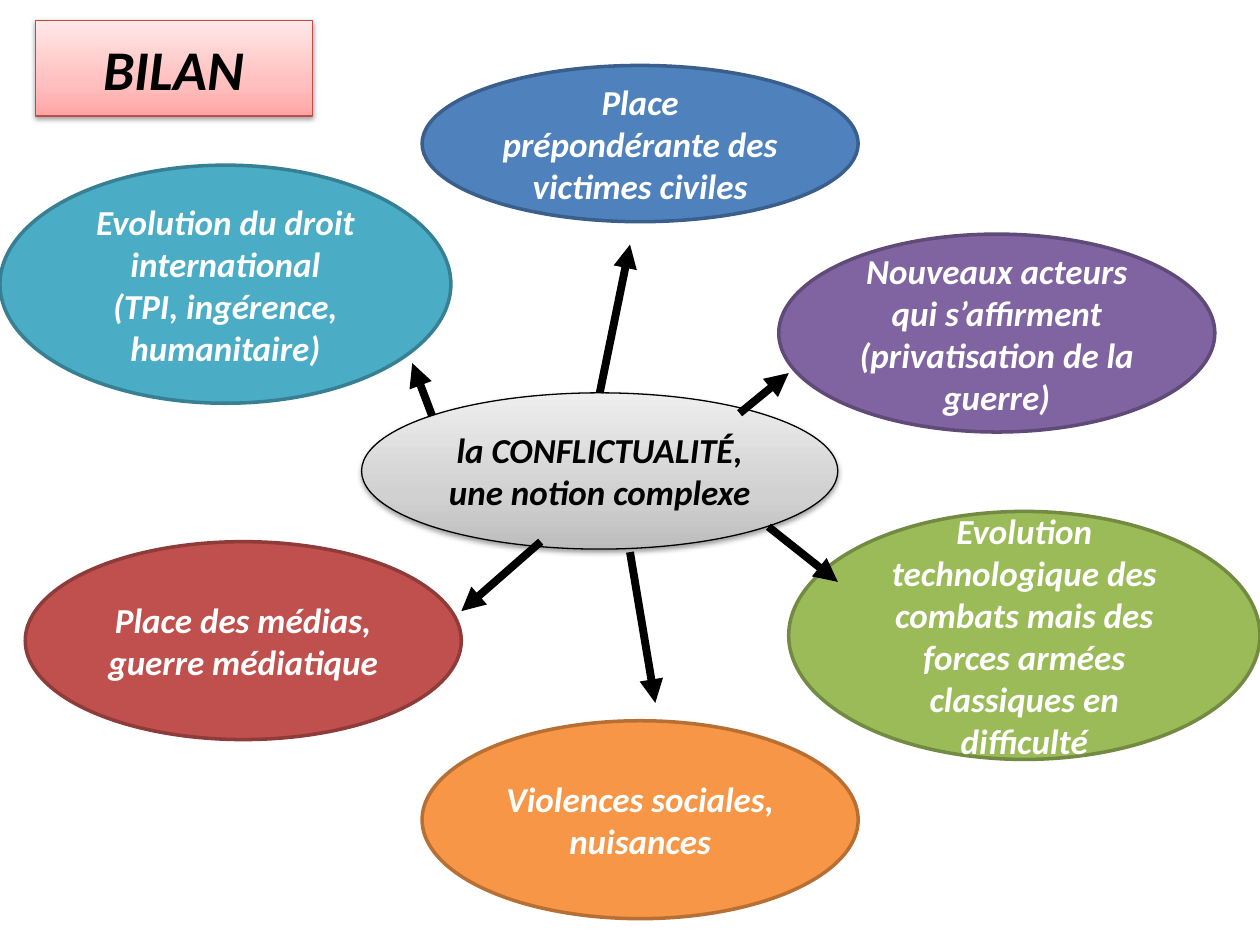
import pptx
import pptx.dml.color
import pptx.enum.dml
import pptx.enum.shapes
import pptx.enum.text
import pptx.oxml
import pptx.oxml.ns
import pptx.util

Cm, Pt = pptx.util.Cm, pptx.util.Pt
NS = pptx.oxml.ns.nsdecls("a")
qn = pptx.oxml.ns.qn

COLORS = {
    "black": "000000", "white": "FFFFFF", "title_line": "BF4C48",
    "teal": "4BACC6", "teal_line": "377F92",
    "blue": "4F81BD", "blue_line": "3A5F8C",
    "purple": "8064A2", "purple_line": "5F4A78",
    "green": "9BBB59", "green_line": "738A42",
    "red": "C0504D", "red_line": "8E3B39",
    "orange": "F79646", "orange_line": "B76F34",
}
GRADIENTS = {
    "grey": {0: "BDBDBD", 35: "D1D1D1", 100: "EEEEEE"},
    "pink": {0: "FFA6A5", 35: "FFC0BF", 100: "FFE7E7"},
}
CENTRE = ((7.29, 7.92, 9.6, 3.15), "la CONFLICTUALITÉ, une notion complexe")
THEMES = [
    ("teal", (0, 3.33, 9.09, 4.8),
     "Evolution du droit international\n(TPI, ingérence, humanitaire)"),
    ("blue", (8.51, 1.32, 8.79, 3.15), "Place prépondérante des victimes civiles"),
    ("purple", (15.7, 4.72, 8.79, 3.99),
     "Nouveaux acteurs qui s’affirment (privatisation de la guerre)"),
    ("green", (15.9, 10.31, 9.5, 5),
     "Evolution technologique des combats mais des forces armées classiques en difficulté"),
    ("red", (0.51, 10.92, 8.79, 3.99), "Place des médias, guerre médiatique"),
    ("orange", (8.51, 14.53, 8.79, 3.99), "Violences sociales, nuisances"),
]
ARROWS = [
    (8.71, 8.38, 8.31, 7.32), (15.49, 10.62, 16.89, 11.73),
    (12.09, 7.92, 12.7, 4.93), (14.91, 8.33, 15.9, 7.52),
    (12.7, 11.13, 13.21, 14.17), (10.9, 10.92, 9.3, 12.32),
]


def rgb(name):
    """Return the palette colour of that name."""
    return pptx.dml.color.RGBColor.from_string(COLORS[name])


def set_line(sp, color, width):
    """Give a shape or connector a solid line."""
    sp.line.color.rgb = rgb(color)
    sp.line.width = Pt(width)


def set_text(sp, text, size, color):
    """Write centred bold italic paragraphs in a shape."""
    tf = sp.text_frame
    tf.text = text
    tf.word_wrap = True
    tf.vertical_anchor = pptx.enum.text.MSO_ANCHOR.MIDDLE
    for p in tf.paragraphs:
        p.alignment = pptx.enum.text.PP_ALIGN.CENTER
        p.font.name = "Calibri"
        p.font.size = Pt(size)
        p.font.bold = p.font.italic = True
        p.font.color.rgb = rgb(color)


def set_relief(sp, gradient, line):
    """Give a shape an upward gradient, a thin line and a soft shadow."""
    sp.fill.gradient()
    sp.fill.gradient_angle = 90
    spPr = sp._element.spPr
    stops = spPr.find(qn("a:gradFill")).find(qn("a:gsLst"))
    for gs in list(stops):
        stops.remove(gs)
    for position, color in GRADIENTS[gradient].items():
        stops.append(pptx.oxml.parse_xml(
            f'<a:gs {NS} pos="{position * 1000}"><a:srgbClr val="{color}"/></a:gs>'))
    set_line(sp, line, 0.75)
    sp.shadow.inherit = False
    spPr.find(qn("a:effectLst")).append(pptx.oxml.parse_xml(
        f'<a:outerShdw {NS} blurRad="40000" dist="20000" dir="5400000" rotWithShape="0">'
        f'<a:srgbClr val="{COLORS["black"]}"><a:alpha val="38000"/></a:srgbClr></a:outerShdw>'))


def add_title(s, left, top, width, height):
    """Place the title panel in the given box."""
    sp = s.shapes.title
    sp.left, sp.top, sp.width, sp.height = map(Cm, (left, top, width, height))
    set_relief(sp, "pink", "title_line")
    set_text(sp, "BILAN", 32, "black")


def add_bubble(s, left, top, width, height, text, color):
    """Add an ellipse with text in the given box."""
    sp = s.shapes.add_shape(pptx.enum.shapes.MSO_SHAPE.OVAL,
                            Cm(left), Cm(top), Cm(width), Cm(height))
    sp.shadow.inherit = False
    set_text(sp, text, 20, color)
    return sp


def add_arrow(s, x1, y1, x2, y2):
    """Add a thick arrow between two points."""
    cxn = s.shapes.add_connector(pptx.enum.shapes.MSO_CONNECTOR.STRAIGHT,
                                 Cm(x1), Cm(y1), Cm(x2), Cm(y2))
    set_line(cxn, "black", 4.5)
    cxn.line._get_or_add_ln().append(
        pptx.oxml.parse_xml(f'<a:tailEnd {NS} type="triangle"/>'))
    cxn._element.spPr.append(pptx.oxml.parse_xml(f"<a:effectLst {NS}/>"))


def add_diagram(s, left, top):
    """Place the central notion, its themes and the arrows from a corner."""
    (x, y, width, height), text = CENTRE
    sp = add_bubble(s, left + x, top + y, width, height, text, "black")
    set_relief(sp, "grey", "black")
    for color, (x, y, width, height), text in THEMES:
        sp = add_bubble(s, left + x, top + y, width, height, text, "white")
        sp.fill.solid()
        sp.fill.fore_color.rgb = rgb(color)
        set_line(sp, f"{color}_line", 2)
    for x1, y1, x2, y2 in ARROWS:
        add_arrow(s, left + x1, top + y1, left + x2, top + y2)


def main():
    """Build and save the slide."""
    prs = pptx.Presentation()
    prs.slide_width, prs.slide_height = Cm(25.4), Cm(19.05)
    s = prs.slides.add_slide(prs.slide_layouts[5])
    add_diagram(s, 0, 0)
    add_title(s, 0.71, 0.41, 5.59, 1.93)
    prs.save("out.pptx")


if __name__ == "__main__":
    main()
